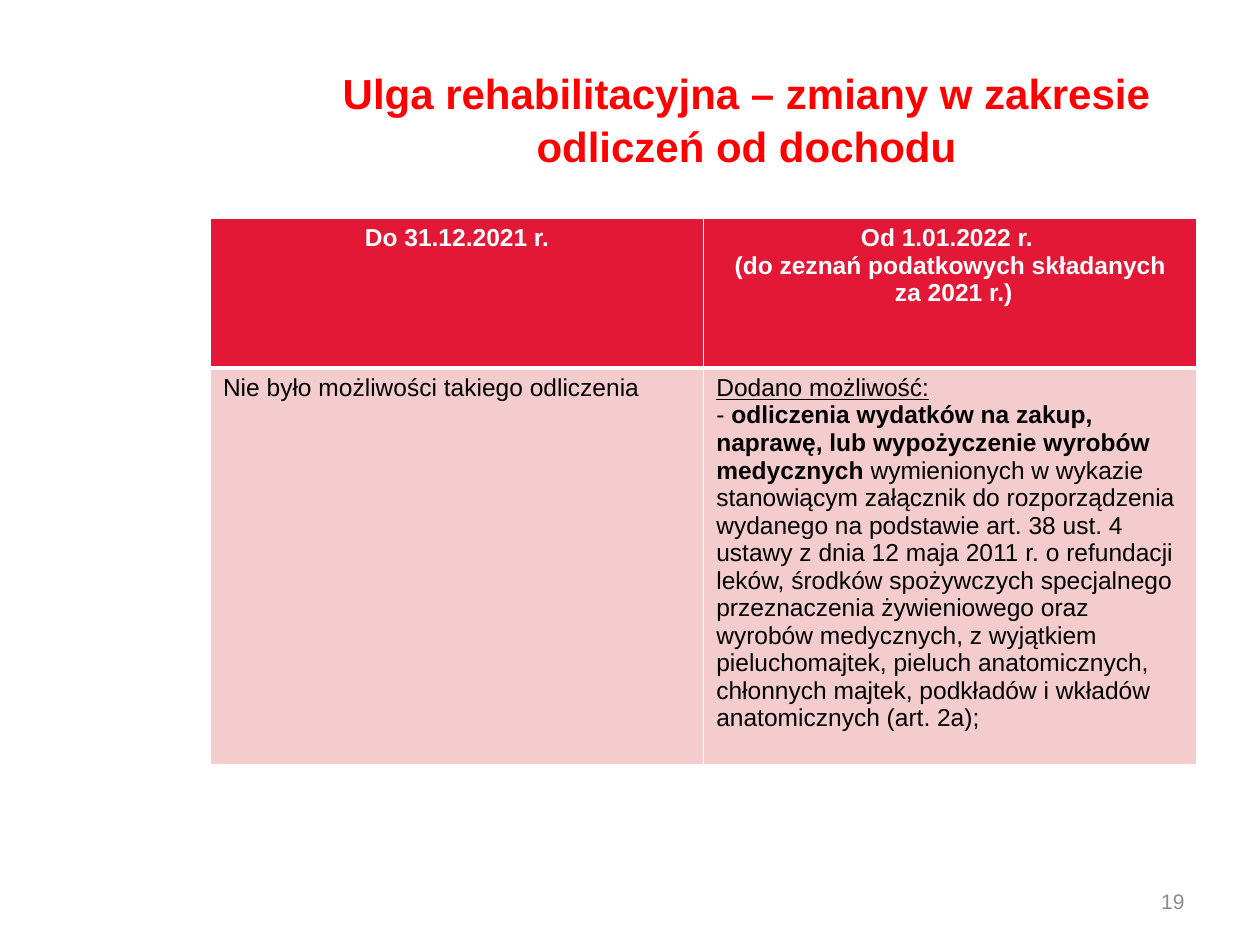
from lxml import etree
from pptx import Presentation
from pptx.dml.color import RGBColor
from pptx.enum import text as t
from pptx.oxml import ns
from pptx.util import Inches, Pt

RED = RGBColor(0xFF, 0x00, 0x00)
CRIMSON = RGBColor(0xE3, 0x18, 0x37)
PINK = RGBColor(0xF4, 0xCC, 0xCE)
GREY = RGBColor(0x8C, 0x8C, 0x8C)
BLACK = RGBColor(0x00, 0x00, 0x00)
WHITE = RGBColor(0xFF, 0xFF, 0xFF)

HEADING = "Ulga rehabilitacyjna – zmiany w zakresie odliczeń od dochodu"
PAGE = "19"
BOLD = {"bold": True}
PERIODS = [
    [["Do 31.12.2021 r."]],
    [["Od 1.01.2022 r. "], ["(do zeznań podatkowych składanych"], [" za 2021 r.)"]],
]
RULES = [
    [["Nie było możliwości takiego odliczenia"]],
    [
        [("Dodano możliwość:", {"underline": True})],
        [
            "- ",
            ("odliczenia wydatków na zakup, naprawę, lub wypożyczenie wyrobów medycznych ", BOLD),
            "wymienionych w wykazie stanowiącym załącznik do rozporządzenia wydanego na "
            "podstawie art. 38 ust. 4 ustawy z dnia 12 maja 2011 r. o refundacji leków, "
            "środków spożywczych specjalnego przeznaczenia żywieniowego oraz wyrobów "
            "medycznych, z wyjątkiem pieluchomajtek, pieluch anatomicznych, chłonnych "
            "majtek, podkładów i wkładów anatomicznych (art. 2a);",
        ],
    ],
]
ROWS = [
    (PERIODS, 1.19, CRIMSON, {"color": WHITE, "bold": True, "align": t.PP_ALIGN.CENTER}, 3),
    (RULES, 3.15, PINK, {"color": BLACK}, 1),
]


def write(frame, paragraphs, size=14, color=BLACK, bold=False,
          align=t.PP_ALIGN.LEFT, spacing=None):
    frame.word_wrap = True
    for index, parts in enumerate(paragraphs):
        paragraph = frame.paragraphs[0] if index == 0 else frame.add_paragraph()
        paragraph.alignment = align
        if spacing:
            paragraph.line_spacing = spacing
        for part in parts:
            words, extra = (part, {}) if isinstance(part, str) else part
            run = paragraph.add_run()
            run.text = words
            run.font.name = "Arial"
            run.font.size = Pt(size)
            run.font.color.rgb = color
            run.font.bold = extra.get("bold", bold)
            run.font.underline = extra.get("underline", False)


def draw_borders(cell, widths):
    properties = cell._tc.get_or_add_tcPr()
    for position, (side, width) in enumerate(widths.items()):
        line = etree.Element(ns.qn(f"a:{side}"), w=str(Pt(width)))
        solid = etree.SubElement(line, ns.qn("a:solidFill"))
        etree.SubElement(solid, ns.qn("a:srgbClr"), val=str(WHITE))
        properties.insert(position, line)


def main():
    deck = Presentation()
    deck.slide_width, deck.slide_height = Inches(10), Inches(7.5)
    slide = deck.slides.add_slide(deck.slide_layouts[5])

    title = slide.shapes.title
    title.left, title.top = Inches(2.53), Inches(0.31)
    title.width, title.height = Inches(6.79), Inches(1.25)
    title.text_frame.vertical_anchor = t.MSO_ANCHOR.MIDDLE
    write(title.text_frame, [[HEADING]], size=24, color=RED, bold=True,
          align=t.PP_ALIGN.CENTER, spacing=1.05)

    total = sum(height for _, height, *_ in ROWS)
    comparison = slide.shapes.add_table(
        len(ROWS), len(PERIODS), Inches(1.67), Inches(1.73), Inches(7.83), Inches(total)
    ).table
    top_line = 1
    for row, (entries, height, fill, style, bottom_line) in enumerate(ROWS):
        comparison.rows[row].height = Inches(height)
        for column, paragraphs in enumerate(entries):
            cell = comparison.cell(row, column)
            cell.fill.solid()
            cell.fill.fore_color.rgb = fill
            write(cell.text_frame, paragraphs, **style)
            draw_borders(cell, {"lnL": 1, "lnR": 1, "lnT": top_line, "lnB": bottom_line})
        top_line = bottom_line

    page = slide.shapes.add_textbox(Inches(7.17), Inches(6.95), Inches(2.33), Inches(0.4))
    page.text_frame.vertical_anchor = t.MSO_ANCHOR.MIDDLE
    write(page.text_frame, [[PAGE]], size=12, color=GREY, align=t.PP_ALIGN.RIGHT)

    deck.save("out.pptx")


if __name__ == "__main__":
    main()
